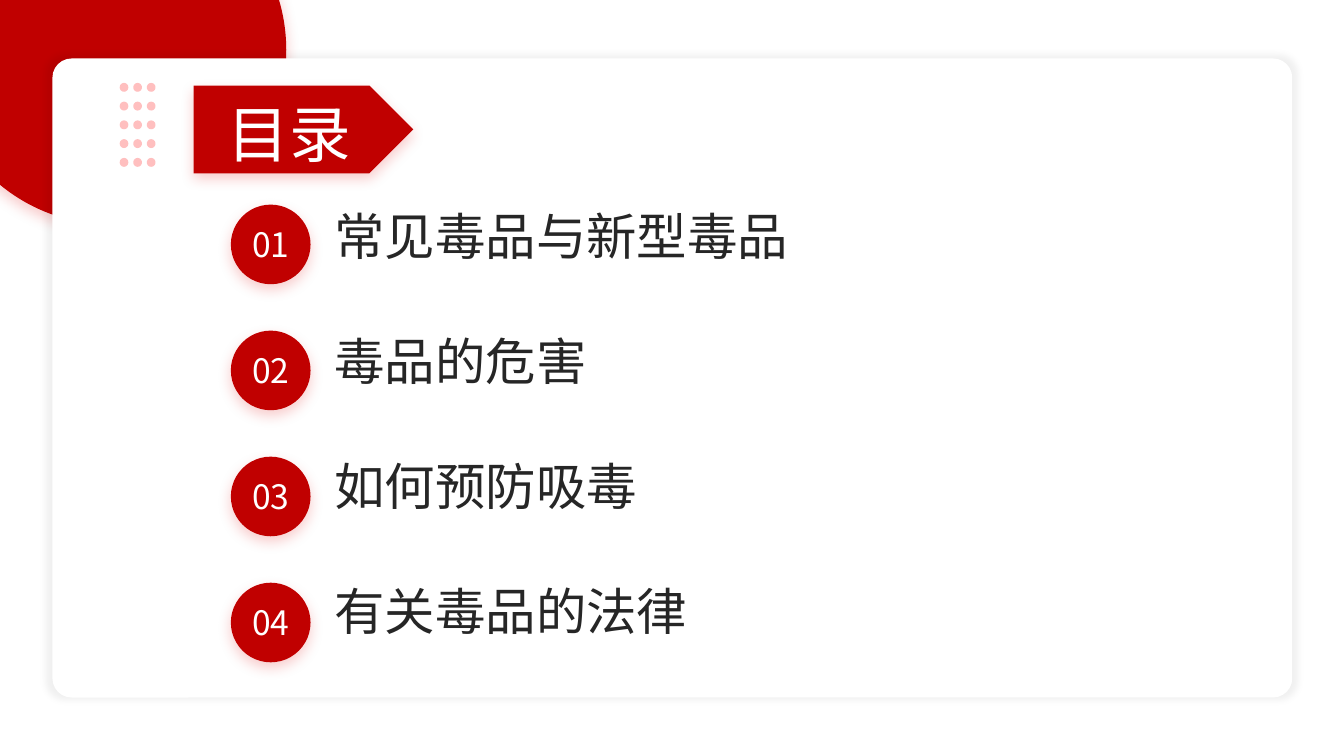
import math
from dataclasses import dataclass

import pptx
import pptx.dml.color
import pptx.enum.shapes
import pptx.enum.text
import pptx.oxml
import pptx.oxml.ns
import pptx.shapes.autoshape
import pptx.util
from pptx.util import Inches, Pt

COLORS = {"red": "C00000", "glow": "DE0000", "pink": "FFBFBF",
          "white": "FFFFFF", "black": "000000", "ink": "262626"}
FONT = "Noto Sans CJK SC"
SLIDE_W, SLIDE_H = Inches(13.333), Inches(7.5)
SHAPES = pptx.enum.shapes.MSO_SHAPE
ANCHOR = pptx.enum.text.MSO_ANCHOR
ALIGN = pptx.enum.text.PP_ALIGN


@dataclass
class Box:
    """A frame in percent of the slide's width and height."""
    x: float
    y: float
    w: float
    h: float

    def emu(self) -> tuple[int, int, int, int]:
        return (px(self.x), py(self.y), px(self.w), py(self.h))


@dataclass
class Shadow:
    color: str
    alpha: int
    blur: float
    dist: float
    scale: int = 100


@dataclass
class Entry:
    number: str
    title: str


RED_GLOW = Shadow("glow", 20, 10, 4)
CARD_SHADOW = Shadow("black", 5, 5, 0, 101)
ENTRIES = [Entry("01", "常见毒品与新型毒品"), Entry("02", "毒品的危害"),
           Entry("03", "如何预防吸毒"), Entry("04", "有关毒品的法律")]
BADGE_TOP, BADGE_STEP = 27.07, 16.67
TITLE_TOP, TITLE_STEP = 26.53, 16.53
CHAR_W, TITLE_PAD = 3.78, 1.6


def px(share: float) -> int:
    return round(SLIDE_W * share / 100)


def py(share: float) -> int:
    return round(SLIDE_H * share / 100)


def rgb(name: str) -> pptx.dml.color.RGBColor:
    return pptx.dml.color.RGBColor.from_string(COLORS[name])


def paint(sp: pptx.shapes.autoshape.Shape, color: str) -> None:
    sp.shadow.inherit = False
    sp.fill.solid()
    sp.fill.fore_color.rgb = rgb(color)
    sp.line.fill.background()


def add_shadow(sp: pptx.shapes.autoshape.Shape, shadow: Shadow) -> None:
    effects = sp.element.spPr.find(pptx.oxml.ns.qn("a:effectLst"))
    scale = shadow.scale * 1000
    effects.append(pptx.oxml.parse_xml(
        f'<a:outerShdw {pptx.oxml.ns.nsdecls("a")} blurRad="{Pt(shadow.blur)}" '
        f'dist="{Pt(shadow.dist)}" dir="5400000" sx="{scale}" sy="{scale}" '
        f'algn="ctr" rotWithShape="0"><a:srgbClr val="{COLORS[shadow.color]}">'
        f'<a:alpha val="{shadow.alpha * 1000}"/></a:srgbClr></a:outerShdw>'))


def add_block(s, kind, box: Box, color: str,
              shadow: Shadow) -> pptx.shapes.autoshape.Shape:
    sp = s.shapes.add_shape(kind, *box.emu())
    paint(sp, color)
    add_shadow(sp, shadow)
    return sp


def write(sp: pptx.shapes.autoshape.Shape, text: str, size: int, color: str,
          align, anchor, insets: tuple[float, float, float, float]) -> None:
    tf = sp.text_frame
    tf.margin_left, tf.margin_top, tf.margin_right, tf.margin_bottom = map(Inches, insets)
    tf.vertical_anchor = anchor
    tf.word_wrap = False
    tf.text = text
    p = tf.paragraphs[0]
    p.alignment = align
    r = p.runs[0]
    r.font.size = Pt(size)
    r.font.name = FONT
    r.font.color.rgb = rgb(color)
    r.font._element.append(pptx.oxml.parse_xml(
        f'<a:ea {pptx.oxml.ns.nsdecls("a")} typeface="{FONT}"/>'))


def add_dots(s, first: Box, cols: int, rows: int, col_step: float,
             row_step: float, sides: int = 24) -> None:
    """Draw a grid of round dots as one outline; first frames the top left dot."""
    fb = None
    for i in range(cols * rows):
        row, col = divmod(i, cols)
        cx = first.x + first.w / 2 + col * col_step
        cy = first.y + first.h / 2 + row * row_step
        angles = [2 * math.pi * k / sides for k in range(sides)]
        points = [(px(cx + first.w / 2 * math.cos(a)),
                   py(cy + first.h / 2 * math.sin(a))) for a in angles]
        if fb is None:
            fb = s.shapes.build_freeform(*points[0])
        else:
            fb.move_to(*points[0])
        fb.add_line_segments(points[1:], close=True)
    paint(fb.convert_to_shape(), "pink")


def add_entry(s, index: int, entry: Entry) -> None:
    badge = Box(17.18, BADGE_TOP + index * BADGE_STEP, 5.93, 10.53)
    sp = add_block(s, SHAPES.OVAL, badge, "red", RED_GLOW)
    write(sp, entry.number, 24, "white", ALIGN.CENTER, ANCHOR.MIDDLE, (0, 0, 0, 0))

    title = Box(24.15, TITLE_TOP + index * TITLE_STEP,
                len(entry.title) * CHAR_W + TITLE_PAD, 9.47)
    sp = s.shapes.add_textbox(*title.emu())
    write(sp, entry.title, 36, "ink", ALIGN.LEFT, ANCHOR.TOP, (0.1, 0.05, 0.1, 0.05))
    sp.text_frame.auto_size = pptx.enum.text.MSO_AUTO_SIZE.SHAPE_TO_FIT_TEXT


def main() -> None:
    prs = pptx.Presentation()
    prs.slide_width, prs.slide_height = SLIDE_W, SLIDE_H
    s = prs.slides.add_slide(prs.slide_layouts[6])

    # Corner disc and white card
    add_block(s, SHAPES.OVAL, Box(-4.73, -16.53, 26.03, 46.27), "red", RED_GLOW)
    card = add_block(s, SHAPES.ROUNDED_RECTANGLE, Box(3.9, 7.73, 92.25, 84.53),
                     "white", CARD_SHADOW)
    card.adjustments[0] = 0.03

    # Contents list
    for index, entry in enumerate(ENTRIES):
        add_entry(s, index, entry)

    # Heading with its dot pattern
    heading = add_block(s, SHAPES.PENTAGON, Box(14.4, 11.33, 16.35, 11.6), "red", RED_GLOW)
    write(heading, "目录", 44, "white", ALIGN.CENTER, ANCHOR.MIDDLE,
          (0.1, 0.12, 0.16, 0.05))
    add_dots(s, Box(8.91, 10.97, 0.64, 1.17), 3, 5, 1.01, 2.48)

    prs.save("out.pptx")


if __name__ == "__main__":
    main()
